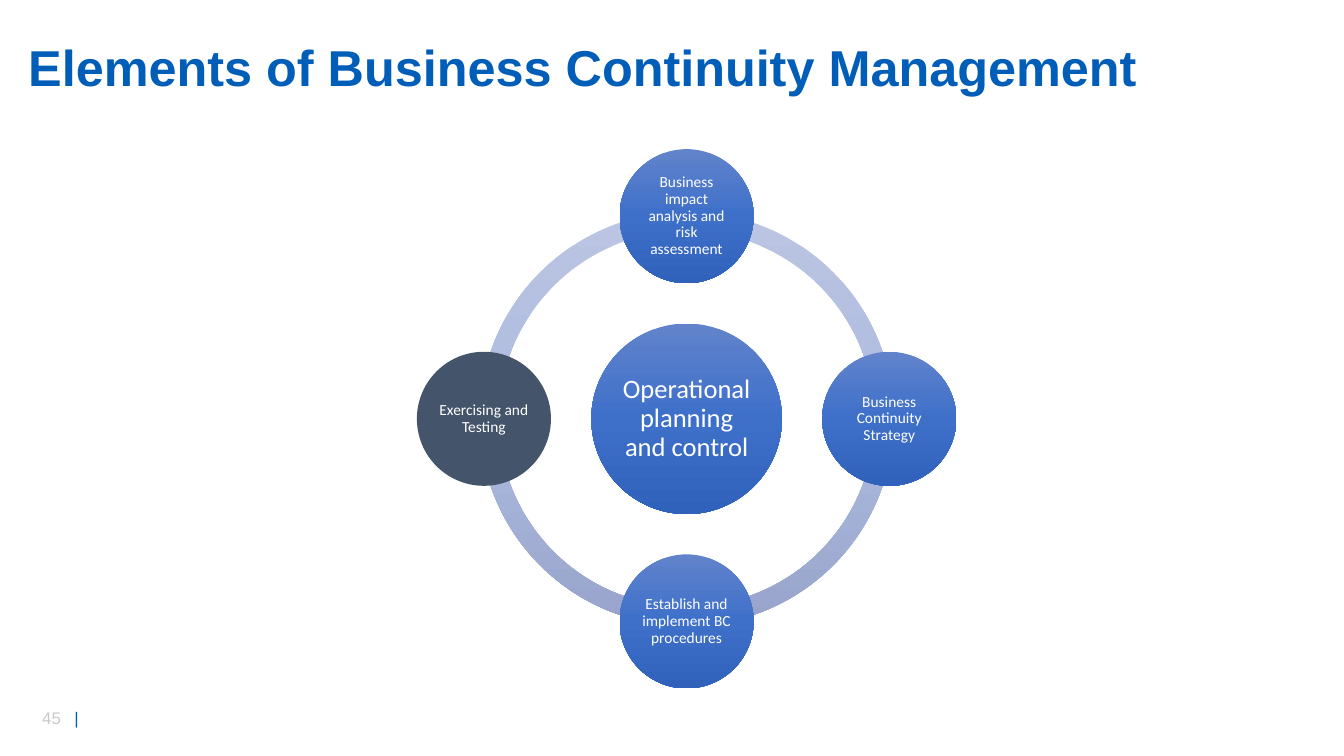
import math

import pptx
import pptx.oxml
from pptx.dml.color import RGBColor
from pptx.enum.shapes import MSO_SHAPE
from pptx.enum.text import MSO_ANCHOR, MSO_AUTO_SIZE, PP_ALIGN
from pptx.oxml.ns import nsdecls
from pptx.util import Inches, Pt

TITLE = "Elements of Business Continuity Management"
PAGE_NUMBER = "45"
HUB = "Operational planning and control"
# (text, clockwise angle from the top, has a gradient fill)
ELEMENTS = [
    ("Business impact analysis and risk assessment", 0, True),
    ("Business Continuity Strategy", 90, True),
    ("Establish and implement BC procedures", 180, True),
    ("Exercising and Testing", 270, False),
]

BLUE = RGBColor(0x00, 0x5E, 0xB8)
GREY = RGBColor(0xC9, 0xC9, 0xC9)
SLATE = RGBColor(0x44, 0x54, 0x6A)
WHITE = RGBColor(0xFF, 0xFF, 0xFF)
RING_STOPS = ("BBC5E3", "AEBBE0", "98A4CB")
CIRCLE_STOPS = ("6183CB", "3E70CA", "3062BB")

CENTER_X, CENTER_Y = 6.81, 4.155
ORBIT = 2.01
RING_SIZE, HUB_SIZE, ELEMENT_SIZE = 4.11, 1.89, 1.33
RING_THICKNESS = 0.046
DEGREE = 0.6  # one degree in the units of a block arc's adjustments


def format_font(font, **values):
    color = values.pop("color")
    for name, value in values.items():
        setattr(font, name, value)
    font.color.rgb = color


def fill_downwards(shape, stops):
    """Give the shape a top-to-bottom gradient with evenly spaced stops."""
    step = 100000 // (len(stops) - 1)
    stop_xml = "".join(
        f'<a:gs pos="{index * step}"><a:srgbClr val="{color}"/></a:gs>'
        for index, color in enumerate(stops)
    )
    gradient = pptx.oxml.parse_xml(
        f'<a:gradFill {nsdecls("a")} rotWithShape="1"><a:gsLst>{stop_xml}</a:gsLst>'
        '<a:lin ang="5400000" scaled="0"/></a:gradFill>'
    )
    shape._element.spPr.insert(2, gradient)  # after position and geometry


def add_centered(slide, preset, x, y, size):
    shape = slide.shapes.add_shape(
        preset, Inches(x - size / 2), Inches(y - size / 2), Inches(size), Inches(size)
    )
    shape.shadow.inherit = False
    shape.line.fill.background()
    return shape


def add_circle(slide, text, x, y, size, font_size, inset, gradient=True):
    circle = add_centered(slide, MSO_SHAPE.OVAL, x, y, size)
    if gradient:
        fill_downwards(circle, CIRCLE_STOPS)
    else:
        circle.fill.solid()
        circle.fill.fore_color.rgb = SLATE
    frame = circle.text_frame
    frame.word_wrap = True
    frame.vertical_anchor = MSO_ANCHOR.MIDDLE
    for side in ("left", "top", "right", "bottom"):
        setattr(frame, f"margin_{side}", Inches(inset))
    paragraph = frame.paragraphs[0]
    paragraph.alignment = PP_ALIGN.CENTER
    paragraph.line_spacing = 0.9
    run = paragraph.add_run()
    run.text = text
    format_font(run.font, name="Calibri", size=Pt(font_size), color=WHITE)


def add_title(slide):
    title = slide.shapes.title
    title.left, title.top = Inches(0.18), Inches(0.36)
    title.width, title.height = Inches(11.64), Inches(0.67)
    frame = title.text_frame
    frame.auto_size = MSO_AUTO_SIZE.NONE
    frame.vertical_anchor = MSO_ANCHOR.MIDDLE
    paragraph = frame.paragraphs[0]
    paragraph.alignment = PP_ALIGN.LEFT
    paragraph.line_spacing = 0.9
    run = paragraph.add_run()
    run.text = TITLE
    format_font(run.font, name="Arial", size=Pt(36), bold=True, color=BLUE)


def add_page_number(slide):
    box = slide.shapes.add_textbox(Inches(0.32), Inches(6.97), Inches(0.71), Inches(0.3))
    box.text_frame.word_wrap = True
    paragraph = box.text_frame.paragraphs[0]
    paragraph._p.get_or_add_pPr().append(pptx.oxml.parse_xml(
        f'<a:tabLst {nsdecls("a")}><a:tab pos="{Inches(0.32)}" algn="l"/></a:tabLst>'
    ))
    for text, color in ((PAGE_NUMBER + "\t", GREY), ("|", BLUE)):
        run = paragraph.add_run()
        run.text = text
        format_font(run.font, name="Arial", size=Pt(12), color=color)


def add_cycle(slide):
    for start in (180, 90, 0, 270):
        arc = add_centered(slide, MSO_SHAPE.BLOCK_ARC, CENTER_X, CENTER_Y, RING_SIZE)
        arc.adjustments[0] = start * DEGREE
        arc.adjustments[1] = (start + 90) % 360 * DEGREE
        arc.adjustments[2] = RING_THICKNESS
        fill_downwards(arc, RING_STOPS)
    add_circle(slide, HUB, CENTER_X, CENTER_Y, HUB_SIZE, 19, 0.03)
    for text, angle, gradient in ELEMENTS:
        x = CENTER_X + ORBIT * math.sin(math.radians(angle))
        y = CENTER_Y - ORBIT * math.cos(math.radians(angle))
        add_circle(slide, text, x, y, ELEMENT_SIZE, 11, 0.02, gradient)


def main():
    presentation = pptx.Presentation()
    presentation.slide_width = Inches(13.33)
    presentation.slide_height = Inches(7.5)
    slide = presentation.slides.add_slide(presentation.slide_layouts[5])
    add_page_number(slide)
    add_title(slide)
    add_cycle(slide)
    presentation.save("out.pptx")


if __name__ == "__main__":
    main()
